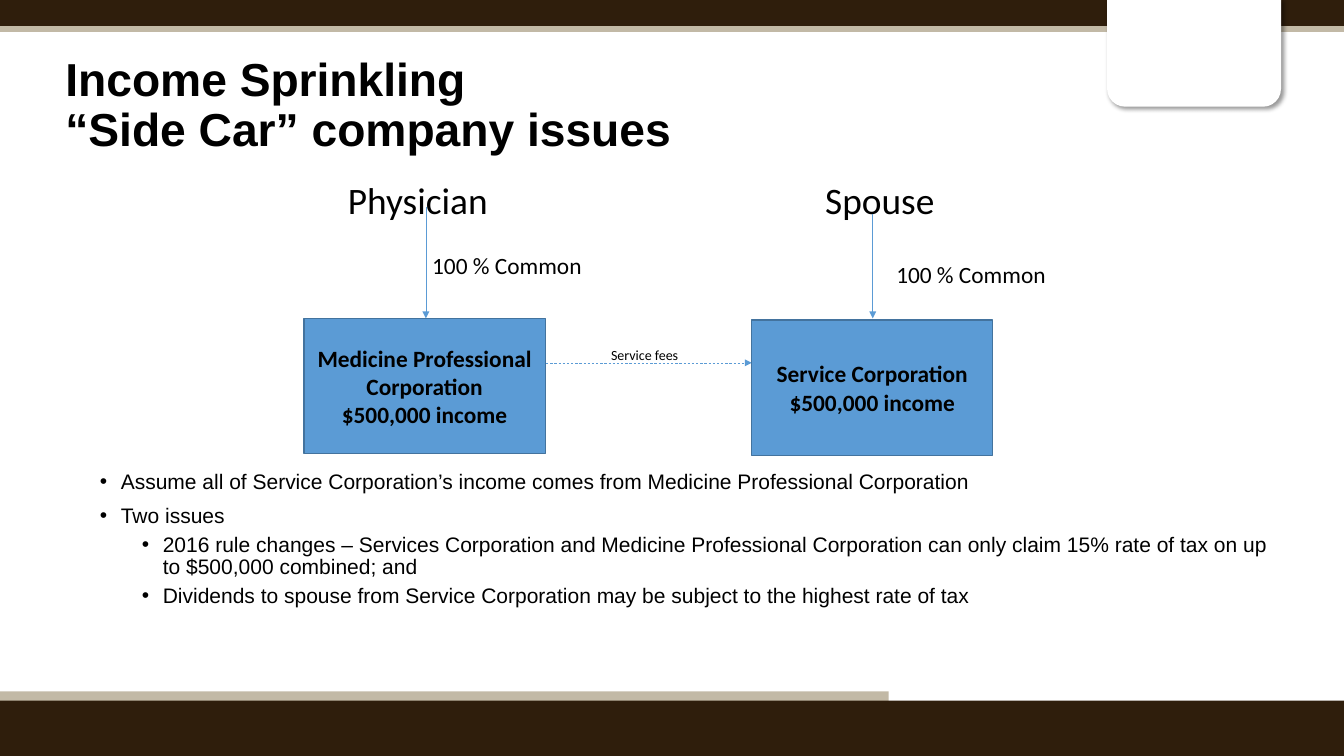
from lxml.etree import SubElement
from pptx import Presentation
from pptx.dml.color import RGBColor
from pptx.enum.dml import MSO_LINE
from pptx.enum.shapes import MSO_CONNECTOR, MSO_SHAPE
from pptx.enum.text import MSO_ANCHOR as ANCHOR, PP_ALIGN as ALIGN
from pptx.oxml.ns import qn
from pptx.util import Inches, Pt

COLORS = {"brown": "2F1E0C", "tan": "C2B9A6", "white": "FFFFFF",
          "black": "000000", "blue": "5B9BD5", "outline": "43739E"}


def rgb(name):
    return RGBColor.from_string(COLORS[name])


def set_formats(target, formats):
    for key, value in formats.items():
        setattr(target, key, value)


class SlideBuilder:
    """Holds the text styles and the slide being built."""

    styles = {
        "title": {"name": "Arial", "size": Pt(39.6), "bold": True},
        "bullet": {"name": "Arial", "size": Pt(18)},
        "owner": {"name": "Calibri", "size": Pt(32)},
        "share": {"name": "Calibri", "size": Pt(20)},
        "fee": {"name": "Calibri", "size": Pt(12)},
        "company": {"name": "Calibri", "size": Pt(20), "bold": True},
    }

    def __init__(self, slide):
        self.shapes = slide.shapes

    def block(self, area, fill, preset=MSO_SHAPE.RECTANGLE, outline=None):
        block = self.shapes.add_shape(preset, *map(Inches, area))
        block.shadow.inherit = False
        block.fill.solid()
        block.fill.fore_color.rgb = rgb(fill)
        if outline:
            block.line.color.rgb = rgb(outline)
            block.line.width = Pt(1)
        else:
            block.line.fill.background()
        return block

    def tab(self, area):
        """White tab hanging from the top edge, with a soft shadow."""
        tab = self.block(area, "white", MSO_SHAPE.ROUND_2_SAME_RECTANGLE)
        tab.rotation = 180
        effects = tab._element.spPr.find(qn("a:effectLst"))
        shadow = SubElement(effects, qn("a:outerShdw"), blurRad=str(Pt(4)),
                            dist=str(Pt(3)), dir="2700000", rotWithShape="0")
        color = SubElement(shadow, qn("a:srgbClr"), val=COLORS["black"])
        SubElement(color, qn("a:alpha"), val="40000")

    def fill_text(self, holder, lines, style, align=ALIGN.CENTER, anchor=ANCHOR.MIDDLE):
        frame = holder.text_frame
        set_formats(frame, {"word_wrap": True, "vertical_anchor": anchor})
        frame.text = "\n".join(lines)
        for paragraph in frame.paragraphs:
            paragraph.alignment = align
            set_formats(paragraph.font, self.styles[style])
            paragraph.font.color.rgb = rgb("black")
        return frame.paragraphs

    def label(self, area, text, style, **layout):
        box = self.shapes.add_textbox(*map(Inches, area))
        return self.fill_text(box, [text], style, **layout)

    def company(self, area, lines):
        self.fill_text(self.block(area, "blue", outline="outline"), lines, "company")

    def bullets(self, area, items):
        box = self.shapes.add_textbox(*map(Inches, area))
        texts = [text for _, text in items]
        paragraphs = self.fill_text(box, texts, "bullet", ALIGN.LEFT, ANCHOR.TOP)
        for index, (paragraph, (level, _)) in enumerate(zip(paragraphs, items)):
            set_formats(paragraph, {"level": level, "line_spacing": 0.9,
                                    "space_before": Pt((10, 5)[level] if index else 0)})
            props = paragraph._p.get_or_add_pPr()
            props.set("marL", str(Inches(0.25 + 0.5 * level)))
            props.set("indent", str(Inches(-0.25)))
            bullet_font = props.makeelement(qn("a:buFont"), {"typeface": "Arial"})
            bullet = props.makeelement(qn("a:buChar"), {"char": "•"})
            defaults = props.find(qn("a:defRPr"))
            defaults.addprevious(bullet_font)
            defaults.addprevious(bullet)

    def arrow(self, start, end, dash=None):
        arrow = self.shapes.add_connector(MSO_CONNECTOR.STRAIGHT,
                                          *map(Inches, start + end))
        arrow.line.color.rgb = rgb("blue")
        arrow.line.width = Pt(0.5)
        if dash:
            arrow.line.dash_style = dash
        outline = arrow._element.spPr.find(qn("a:ln"))
        SubElement(outline, qn("a:tailEnd"), type="triangle")
        SubElement(arrow._element.spPr, qn("a:effectLst"))


def main():
    deck = Presentation()
    deck.slide_width, deck.slide_height = Inches(16), Inches(9)
    page = SlideBuilder(deck.slides.add_slide(deck.slide_layouts[6]))

    for area, fill in [
        ((0, 0.3, 16, 0.08), "tan"),
        ((0, 0, 16, 0.31), "brown"),
        ((0, 8.23, 10.58, 0.17), "tan"),
        ((0, 8.34, 16, 0.66), "brown"),
    ]:
        page.block(area, fill)
    page.tab((13.18, -0.01, 2.07, 1.28))

    title = page.label((0.68, 0.67, 12.4, 1.2),
                       "Income Sprinkling\v“Side Car” company issues",
                       "title", align=ALIGN.LEFT)
    title[0].line_spacing = 0.9

    page.bullets((1.09, 5.56, 14.16, 1.95), [
        (0, "Assume all of Service Corporation’s income comes from "
            "Medicine Professional Corporation"),
        (0, "Two issues"),
        (1, "2016 rule changes – Services Corporation and Medicine Professional "
            "Corporation can only claim 15% rate of tax on up to $500,000 combined; and"),
        (1, "Dividends to spouse from Service Corporation may be subject to "
            "the highest rate of tax"),
    ])

    for area, text, style in [
        ((3.91, 2.15, 2.13, 0.45), "Physician", "owner"),
        ((9.65, 2.21, 1.65, 0.34), "Spouse", "owner"),
        ((4.97, 2.99, 2.13, 0.34), "100 % Common", "share"),
        ((10.39, 2.96, 2.34, 0.61), "100 % Common", "share"),
        ((6.85, 4.05, 1.65, 0.34), "Service fees", "fee"),
    ]:
        page.label(area, text, style)

    page.arrow((6.5, 4.32), (8.95, 4.32), MSO_LINE.DASH)
    page.arrow((5.07, 2.46), (5.07, 3.79))
    page.arrow((10.39, 2.55), (10.39, 3.79))

    income = "$500,000 income"
    page.company((3.62, 3.79, 2.87, 1.61),
                 ["Medicine Professional Corporation", income])
    page.company((8.95, 3.81, 2.87, 1.61), ["Service Corporation", income])

    deck.save("out.pptx")


if __name__ == "__main__":
    main()
